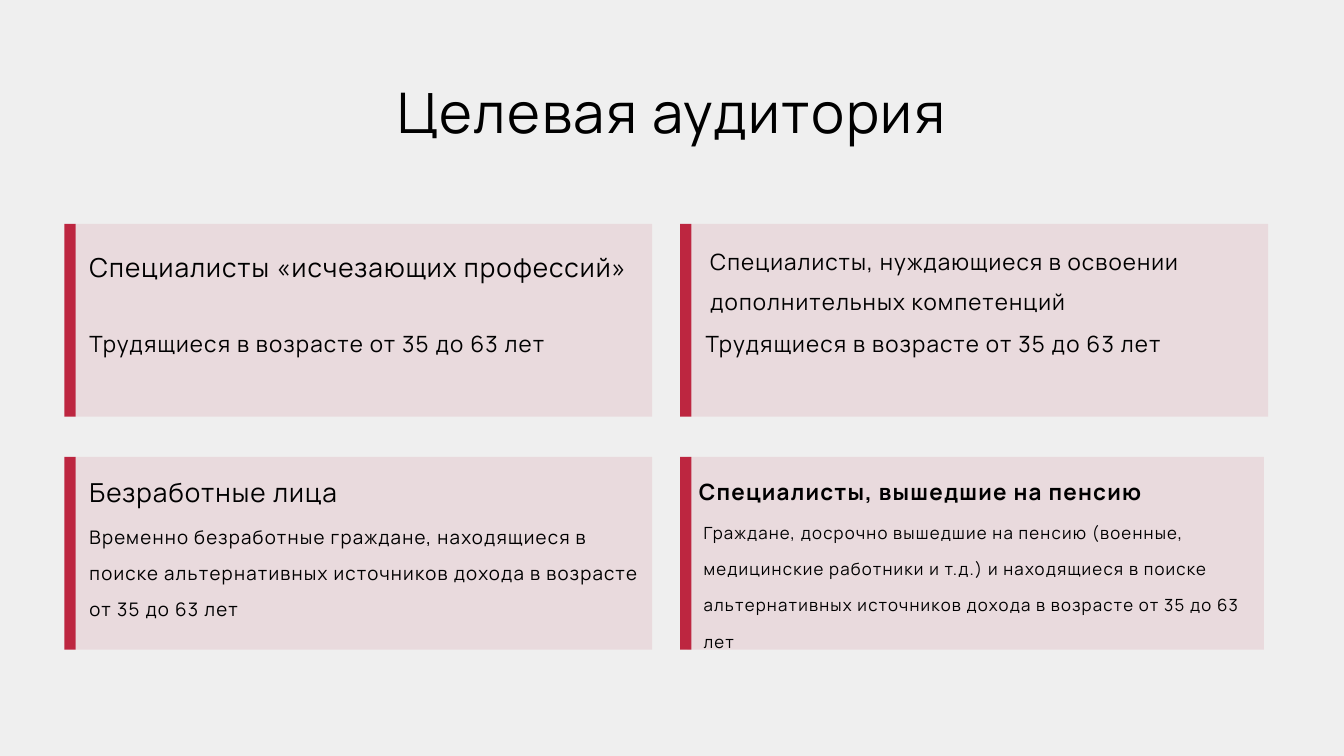
from typing import NamedTuple

from lxml.etree import SubElement
from pptx import Presentation
from pptx.dml.color import RGBColor
from pptx.enum.shapes import MSO_SHAPE
from pptx.enum.text import MSO_AUTO_SIZE, PP_ALIGN
from pptx.oxml.ns import qn
from pptx.slide import Slide
from pptx.util import Pt

BACKGROUND = RGBColor(0xEF, 0xEF, 0xEF)
CRIMSON = RGBColor(0xBD, 0x26, 0x40)
BLACK = RGBColor(0, 0, 0)
FONT = "Manrope"

ROW_TOPS = (239.8, 489.6)
BAR_LEFTS = (69, 728.8)
BAR_WIDTH = 12
CARD_WIDTH, CARD_HEIGHT = 617.8, 206.6
WORKING_AGE = "Трудящиеся в возрасте от 35 до 63 лет"


class Box(NamedTuple):
    left: float
    top: float
    width: float
    height: float


class Label(NamedTuple):
    text: str
    box: Box
    size: float
    line: float = 39
    tracking: float = 1.3
    bold: bool = False


class Card(NamedTuple):
    column: int
    row: int
    heading: Label
    body: Label
    panel_shift: float = 0


CARDS = (
    Card(0, 0,
         Label("Специалисты «исчезающих профессий»",
               Box(95.8, 260.6, 579, 43), 28, line=42.5, tracking=1.2),
         Label(WORKING_AGE, Box(95.8, 343.4, 579, 39.6), 24)),
    Card(1, 0,
         Label("Специалисты, нуждающиеся в освоении дополнительных компетенций",
               Box(761, 252, 579, 87), 24, line=42.5, tracking=1.2),
         Label(WORKING_AGE, Box(756, 343.4, 579, 39.6), 24)),
    Card(0, 1,
         Label("Безработные лица",
               Box(95.8, 501.8, 569, 40.3), 28, line=42.5, tracking=1.2),
         Label("Временно безработные граждане, находящиеся в поиске "
               "альтернативных источников дохода в возрасте от 35 до 63 лет",
               Box(95.8, 548, 589, 118), 20)),
    Card(1, 1,
         Label("Специалисты, вышедшие на пенсию",
               Box(748.8, 499, 587, 43), 24, line=42.5, bold=True),
         Label("Граждане, досрочно вышедшие на пенсию (военные, медицинские "
               "работники и т.д.) и находящиеся в поиске альтернативных "
               "источников дохода в возрасте от 35 до 63 лет",
               Box(753.8, 542.2, 600.5, 157.7), 18),
         panel_shift=-4.3),
)


def add_rectangle(page: Slide, box: Box, alpha: int = 100) -> None:
    shape = page.shapes.add_shape(MSO_SHAPE.RECTANGLE, *map(Pt, box))
    shape.shadow.inherit = False
    shape.line.fill.background()
    shape.fill.solid()
    shape.fill.fore_color.rgb = CRIMSON
    if alpha < 100:
        color = shape.fill._xPr.find(f".//{qn('a:srgbClr')}")
        SubElement(color, qn("a:alpha")).set("val", str(alpha * 1000))


def add_text(page: Slide, text: str, box: Box, *, size: float, line: float,
             tracking: float, bold: bool = False,
             align: PP_ALIGN = PP_ALIGN.LEFT) -> None:
    frame = page.shapes.add_textbox(*map(Pt, box)).text_frame
    frame.word_wrap = True
    frame.auto_size = MSO_AUTO_SIZE.SHAPE_TO_FIT_TEXT
    frame.margin_left = frame.margin_right = 0
    frame.margin_top = frame.margin_bottom = 0
    para = frame.paragraphs[0]
    para.alignment = align
    para.line_spacing = Pt(line)
    span = para.add_run()
    span.text = text
    span.font.name = FONT
    span.font.size = Pt(size)
    span.font.bold = bold
    span.font.color.rgb = BLACK
    span._r.get_or_add_rPr().set("spc", str(round(tracking * 100)))


def add_card(page: Slide, card: Card) -> None:
    left, top = BAR_LEFTS[card.column], ROW_TOPS[card.row]
    panel_left = left + BAR_WIDTH + card.panel_shift
    add_rectangle(page, Box(panel_left, top, CARD_WIDTH, CARD_HEIGHT), alpha=10)
    add_rectangle(page, Box(left, top, BAR_WIDTH, CARD_HEIGHT))
    for label in (card.heading, card.body):
        add_text(page, label.text, label.box, size=label.size, line=label.line,
                 tracking=label.tracking, bold=label.bold)


def main() -> None:
    deck = Presentation()
    deck.slide_width, deck.slide_height = Pt(1440), Pt(810)
    page = deck.slides.add_slide(deck.slide_layouts[6])
    page.background.fill.solid()
    page.background.fill.fore_color.rgb = BACKGROUND

    # Title
    add_text(page, "Целевая аудитория", Box(160.5, 71.3, 1119, 82), size=60,
             line=84, tracking=1.8, align=PP_ALIGN.CENTER)

    # Audience cards
    for card in CARDS:
        add_card(page, card)

    deck.save("out.pptx")


if __name__ == "__main__":
    main()
